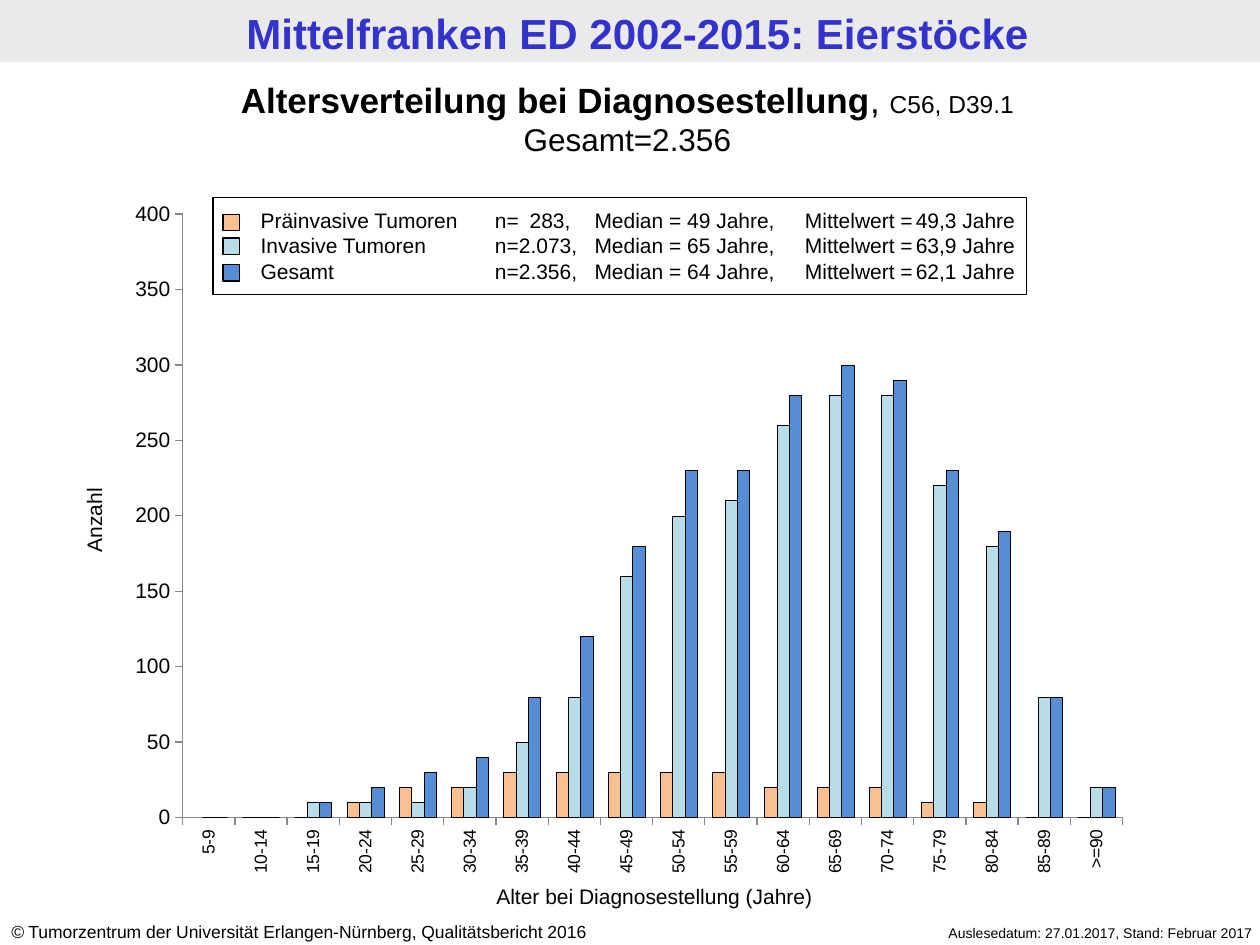
from lxml import etree
from pptx import Presentation
from pptx.chart.data import CategoryChartData
from pptx.dml.color import RGBColor
from pptx.enum import chart as ch, shapes, text
from pptx.oxml import parse_xml
from pptx.oxml.ns import nsdecls, qn
from pptx.util import Inches, Pt

COLORS = {"band": "EAEAEA", "title": "3333CC", "ink": "000000", "paper": "FFFFFF",
          "axis": "868686", "pre": "FAC090", "invasive": "B7DEE8", "total": "558ED5"}
LEFT, CENTER, RIGHT = text.PP_ALIGN.LEFT, text.PP_ALIGN.CENTER, text.PP_ALIGN.RIGHT

TITLE = [[("Mittelfranken ED 2002-2015: Eierstöcke", 24, "b")]]
HEADING = [
    [("Altersverteilung bei Diagnosestellung", 20, "b"), (", ", 20, ""), ("C56, D39.1", 14, "")],
    [("Gesamt=2.356", 18, "")],
]
LABELS = [
    ([[("©", 10, "i"), (" Tumorzentrum der Universität Erlangen-Nürnberg, Qualitätsbericht 2016", 10, "")]],
     (-0.01, 7.26, 5.24, 0.27), LEFT, 0),
    ([[("Auslesedatum: 27.01.2017, Stand: Februar 2017", 8, "")]], (6.65, 7.29, 3.39, 0.24), RIGHT, 0),
    (HEADING, (-0.04, 0.57, 10.04, 0.74), CENTER, 0),
    ([[("Alter bei Diagnosestellung (Jahre)", 12, "")]], (3.66, 6.96, 3.07, 0.3), CENTER, 0),
    ([[("Anzahl", 12, "")]], (-0.56, 3.98, 2.61, 0.3), CENTER, 270),
]
LEGEND = [
    ("pre", 1.7, "Präinvasive Tumoren\tn=\t283,\tMedian = 49 Jahre,\tMittelwert =\t49,3 Jahre"),
    ("invasive", 1.89, "Invasive Tumoren \t\tn=\t2.073,\tMedian = 65 Jahre,\tMittelwert =\t63,9 Jahre"),
    ("total", 2.1, "Gesamt\t\tn=2.356,\tMedian = 64 Jahre,\tMittelwert =\t62,1 Jahre"),
]
TABS = [(1.47, "l"), (1.86, "l"), (2.46, "r"), (2.65, "l"), (4.32, "l"), (5.2, "l")]
AGES = [f"{start}-{start + 4}" for start in range(5, 90, 5)] + [">=90"]
COUNTS = {
    "pre": [None, 0, 0, 10, 20, 20, 30, 30, 30, 30, 30, 20, 20, 20, 10, 10, 0, 0],
    "invasive": [0, 0, 10, 10, 10, 20, 50, 80, 160, 200, 210, 260, 280, 280, 220, 180, 80, 20],
    "total": [0, 0, 10, 20, 30, 40, 80, 120, 180, 230, 230, 280, 300, 290, 230, 190, 80, 20],
}
CHART_BOX = (0.91, 1.5, 8.16, 5.55)
PLOT_BOX = (1.45, 1.7, 7.46, 4.79)


def rgb(name):
    return RGBColor.from_string(COLORS[name])


def inches(box):
    return [Inches(length) for length in box]


def set_font(font, size, color="ink", style=""):
    font.name, font.size = "Arial", Pt(size)
    font.bold, font.italic = "b" in style, "i" in style
    font.color.rgb = rgb(color)


def write(frame, paragraphs, align, color="ink", tabs=()):
    frame.word_wrap = True
    for index, runs in enumerate(paragraphs):
        paragraph = frame.add_paragraph() if index else frame.paragraphs[0]
        paragraph.alignment = align
        if tabs:
            tab_list = etree.SubElement(paragraph._p.get_or_add_pPr(), qn("a:tabLst"))
            for position, side in tabs:
                etree.SubElement(tab_list, qn("a:tab"), pos=str(Inches(position)), algn=side)
        for words, size, style in runs:
            run = paragraph.add_run()
            run.text = words
            set_font(run.font, size, color, style)


def add_label(slide, paragraphs, box, align, turn=0, tabs=()):
    label = slide.shapes.add_textbox(*inches(box))
    label.rotation = turn
    write(label.text_frame, paragraphs, align, tabs=tabs)


def add_box(slide, box, fill=None, outlined=True):
    rect = slide.shapes.add_shape(shapes.MSO_SHAPE.RECTANGLE, *inches(box))
    rect.shadow.inherit = False
    if fill:
        rect.fill.solid()
        rect.fill.fore_color.rgb = rgb(fill)
    else:
        rect.fill.background()
    if outlined:
        rect.line.color.rgb = rgb("ink")
        rect.line.width = Pt(0.75)
    else:
        rect.line.fill.background()


def add_age_chart(slide):
    data = CategoryChartData()
    data.categories = AGES
    for number, values in enumerate(COUNTS.values(), 1):
        data.add_series(f"Series {number}", values)
    chart = slide.shapes.add_chart(ch.XL_CHART_TYPE.COLUMN_CLUSTERED,
                                   *inches(CHART_BOX), data).chart
    chart.has_legend = chart.has_title = False
    chart.font.name, chart.font.size = "Calibri", Pt(18)
    chart.font.color.rgb = rgb("ink")

    bars = chart.plots[0]
    bars.gap_width, bars.overlap, bars.vary_by_categories = 124, 0, False
    for series, color in zip(bars.series, COUNTS):
        series.format.fill.solid()
        series.format.fill.fore_color.rgb = rgb(color)
        series.format.line.color.rgb = rgb("ink")
        series.format.line.width = Pt(0.25)

    for axis, size in ((chart.category_axis, 10), (chart.value_axis, 12)):
        axis.has_major_gridlines = False
        axis.major_tick_mark = ch.XL_TICK_MARK.OUTSIDE
        axis.minor_tick_mark = ch.XL_TICK_MARK.NONE
        axis.format.line.color.rgb = rgb("axis")
        set_font(axis.tick_labels.font, size)
    chart.value_axis.minimum_scale, chart.value_axis.maximum_scale = 0, 400
    chart.value_axis.major_unit = 50
    chart.category_axis._element.find(qn("c:txPr")).find(qn("a:bodyPr")).set("rot", "-5400000")

    area = chart._chartSpace.chart.plotArea
    for old in area.findall(qn("c:layout")):
        area.remove(old)
    left, top, width, height = CHART_BOX
    plot_left, plot_top, plot_width, plot_height = PLOT_BOX
    layout = {"x": (plot_left - left) / width, "y": (plot_top - top) / height,
              "w": plot_width / width, "h": plot_height / height}
    sizes = "".join(f'<c:{key} val="{value:.4f}"/>' for key, value in layout.items())
    area.insert(0, parse_xml(
        f'<c:layout {nsdecls("c")}><c:manualLayout><c:layoutTarget val="inner"/>'
        f'<c:xMode val="edge"/><c:yMode val="edge"/>{sizes}</c:manualLayout></c:layout>'))
    area.append(parse_xml(
        f'<c:spPr {nsdecls("c", "a")}><a:solidFill><a:srgbClr val="{COLORS["paper"]}"/>'
        '</a:solidFill></c:spPr>'))


def main():
    deck = Presentation()
    deck.slide_width, deck.slide_height = Inches(10), Inches(7.5)
    slide = deck.slides.add_slide(deck.slide_layouts[5])
    add_box(slide, (0, 0, 10, 0.49), "band", outlined=False)

    title = slide.shapes.title
    title.left, title.top, title.width, title.height = inches((0.06, 0.01, 10, 0.49))
    title.text_frame.vertical_anchor = text.MSO_ANCHOR.TOP
    write(title.text_frame, TITLE, CENTER, "title")
    slide.shapes._spTree.append(title._element)

    add_age_chart(slide)
    for label in LABELS:
        add_label(slide, *label)

    rows = [[(words, 12, "")] for _, _, words in LEGEND]
    add_label(slide, rows, (1.97, 1.6, 6.42, 0.71), LEFT, tabs=TABS)
    add_box(slide, (1.69, 1.57, 6.46, 0.77))
    for color, top, _ in LEGEND:
        add_box(slide, (1.77, top, 0.13, 0.13), color)
    deck.save("out.pptx")


if __name__ == "__main__":
    main()
